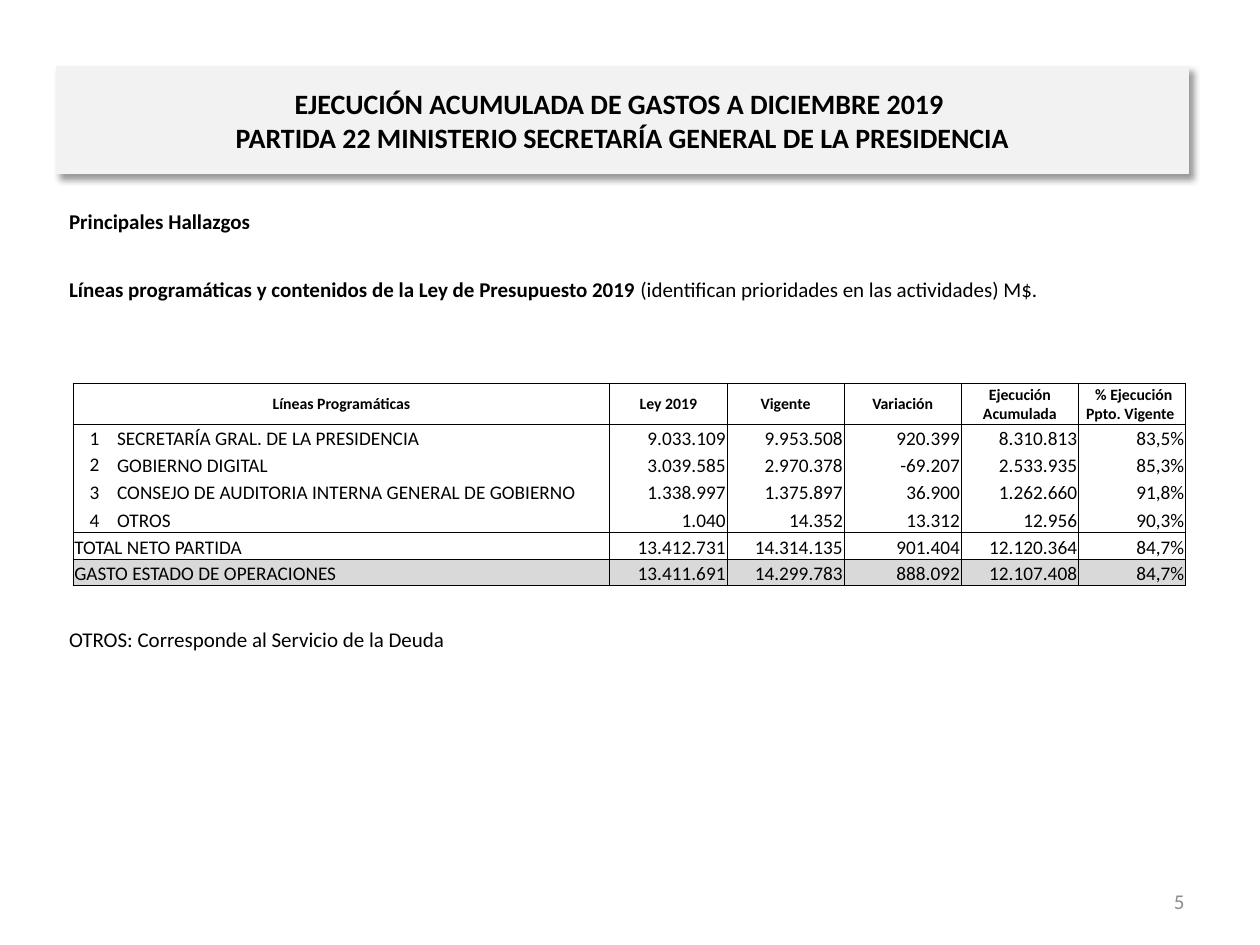
import pptx
import pptx.util
import pptx.dml.color
import pptx.enum.shapes
import pptx.enum.text
import pptx.oxml
import pptx.oxml.ns

Inches, Pt = pptx.util.Inches, pptx.util.Pt
RGB = pptx.dml.color.RGBColor
ALIGN = pptx.enum.text.PP_ALIGN
ANCHOR = pptx.enum.text.MSO_ANCHOR
NS = pptx.oxml.ns.nsdecls("a")

BLACK = RGB(0, 0, 0)
WHITE = RGB(0xFF, 0xFF, 0xFF)
PALE = RGB(0xF2, 0xF2, 0xF2)
GREY = RGB(0xD9, 0xD9, 0xD9)
DIM = RGB(0x8C, 0x8C, 0x8C)

# Content
TITLE = ("EJECUCIÓN ACUMULADA DE GASTOS A DICIEMBRE 2019 \v"
         "PARTIDA 22 MINISTERIO SECRETARÍA GENERAL DE LA PRESIDENCIA")
# Each paragraph: bold part, plain part, space before, space after
BODY = [
    ("Principales Hallazgos", "", 12, 12),
    ("Líneas programáticas y contenidos de la Ley de Presupuesto 2019",
     " (identifican prioridades en las actividades) M$.", 12, 12),
    ("", "OTROS: Corresponde al Servicio de la Deuda", 174, 6),
]
PAGE = "5"
HEAD = ["Líneas Programáticas", "", "Ley 2019", "Vigente", "Variación",
        "Ejecución Acumulada", " % Ejecución Ppto. Vigente "]
LINES = [
    ["1", "SECRETARÍA GRAL. DE LA PRESIDENCIA",
     "9.033.109", "9.953.508", "920.399", "8.310.813", "83,5%"],
    ["2", "GOBIERNO DIGITAL",
     "3.039.585", "2.970.378", "-69.207", "2.533.935", "85,3%"],
    ["3", "CONSEJO DE AUDITORIA INTERNA GENERAL DE GOBIERNO",
     "1.338.997", "1.375.897", "36.900", "1.262.660", "91,8%"],
    ["4", "OTROS", "1.040", "14.352", "13.312", "12.956", "90,3%"],
]
TOTALS = [
    ["TOTAL NETO PARTIDA", "",
     "13.412.731", "14.314.135", "901.404", "12.120.364", "84,7%"],
    ["GASTO ESTADO DE OPERACIONES", "",
     "13.411.691", "14.299.783", "888.092", "12.107.408", "84,7%"],
]
COLS = [0.34, 3.92] + [0.93] * 4 + [0.85]
HIGHS = [0.33, 0.21, 0.21, 0.22, 0.22, 0.21, 0.21]


def style(run, size, color=BLACK, bold=False):
    run.font.name, run.font.size, run.font.bold = "Calibri", Pt(size), bold
    run.font.color.rgb = color


def border(cell, sides):
    props = cell._tc.get_or_add_tcPr()
    for side in "LRTB":
        fill = ('<a:solidFill><a:srgbClr val="000000"/></a:solidFill>'
                if side in sides else "<a:noFill/>")
        props.append(pptx.oxml.parse_xml(
            f'<a:ln{side} {NS} w="{Pt(0.5)}">{fill}</a:ln{side}>'))


deck = pptx.Presentation()
deck.slide_width, deck.slide_height = Inches(10), Inches(7.5)
slide = deck.slides.add_slide(deck.slide_layouts[6])
shapes = slide.shapes

# Findings text
box = shapes.add_textbox(Inches(0.45), Inches(1.61), Inches(9), Inches(5.26))
frame = box.text_frame
frame.word_wrap = True
for i, (strong, plain, before, after) in enumerate(BODY):
    para = frame.add_paragraph() if i else frame.paragraphs[0]
    para.alignment = ALIGN.JUSTIFY
    para.space_before, para.space_after = Pt(before), Pt(after)
    for text, bold in ((strong, True), (plain, False)):
        if text:
            run = para.add_run()
            run.text = text
            style(run, 12, bold=bold)

# Page number
box = shapes.add_textbox(Inches(7.17), Inches(6.95), Inches(2.33), Inches(0.4))
frame = box.text_frame
frame.word_wrap = True
frame.vertical_anchor = ANCHOR.MIDDLE
frame.text = PAGE
frame.paragraphs[0].alignment = ALIGN.RIGHT
style(frame.paragraphs[0].runs[0], 12, DIM)

# Title banner with its soft shadow
banner = shapes.add_shape(pptx.enum.shapes.MSO_SHAPE.RECTANGLE,
                          Inches(0.45), Inches(0.53), Inches(8.98), Inches(0.85))
banner.fill.solid()
banner.fill.fore_color.rgb = PALE
banner.line.color.rgb = PALE
banner.line.width = Pt(0.75)
banner.shadow.inherit = False
glow = banner._element.spPr.find(pptx.oxml.ns.qn("a:effectLst"))
glow.append(pptx.oxml.parse_xml(
    f'<a:outerShdw {NS} blurRad="{Pt(4)}" dist="{Pt(3)}" dir="2700000" algn="tl"'
    ' rotWithShape="0"><a:srgbClr val="000000"><a:alpha val="40000"/>'
    '</a:srgbClr></a:outerShdw>'))
frame = banner.text_frame
frame.word_wrap = True
frame.vertical_anchor = ANCHOR.MIDDLE
frame.text = TITLE
frame.paragraphs[0].alignment = ALIGN.CENTER
for run in frame.paragraphs[0].runs:
    style(run, 16, bold=True)

# Budget table
rows = [HEAD] + LINES + TOTALS
table = shapes.add_table(len(rows), len(COLS), Inches(0.58), Inches(3.04),
                         Inches(sum(COLS)), Inches(sum(HIGHS))).table
table.horz_banding = table.first_row = False
for col, wide in zip(table.columns, COLS):
    col.width = Inches(wide)
for row, high in zip(table.rows, HIGHS):
    row.height = Inches(high)

for r, row in enumerate(rows):
    head, last = r == 0, r == len(rows) - 1
    item = 1 <= r <= len(LINES)
    if not item:
        table.cell(r, 0).merge(table.cell(r, 1))
    for c, text in enumerate(row):
        cell = table.cell(r, c)
        cell.margin_left = cell.margin_top = cell.margin_right = Inches(0.01)
        cell.margin_bottom = 0
        middle = head or (r, c) == (2, 0)
        cell.vertical_anchor = ANCHOR.MIDDLE if middle else ANCHOR.BOTTOM

        # Line items share one frame, without rules between them
        sides = "LRTB"
        if item:
            sides = {0: "L", 1: "R"}.get(c, "LR")
            sides += {1: "T", len(LINES): "B"}.get(r, "")
        border(cell, sides)
        if last or head and c >= 5:
            cell.fill.solid()
            cell.fill.fore_color.rgb = GREY if last else WHITE
        else:
            cell.fill.background()

        if text:
            cell.text_frame.text = text
            para = cell.text_frame.paragraphs[0]
            if head or item and c == 0:
                para.alignment = ALIGN.CENTER
            else:
                para.alignment = ALIGN.RIGHT if c > 1 else ALIGN.LEFT
            style(para.runs[0], 9 if head else 11, bold=head)

deck.save("out.pptx")
